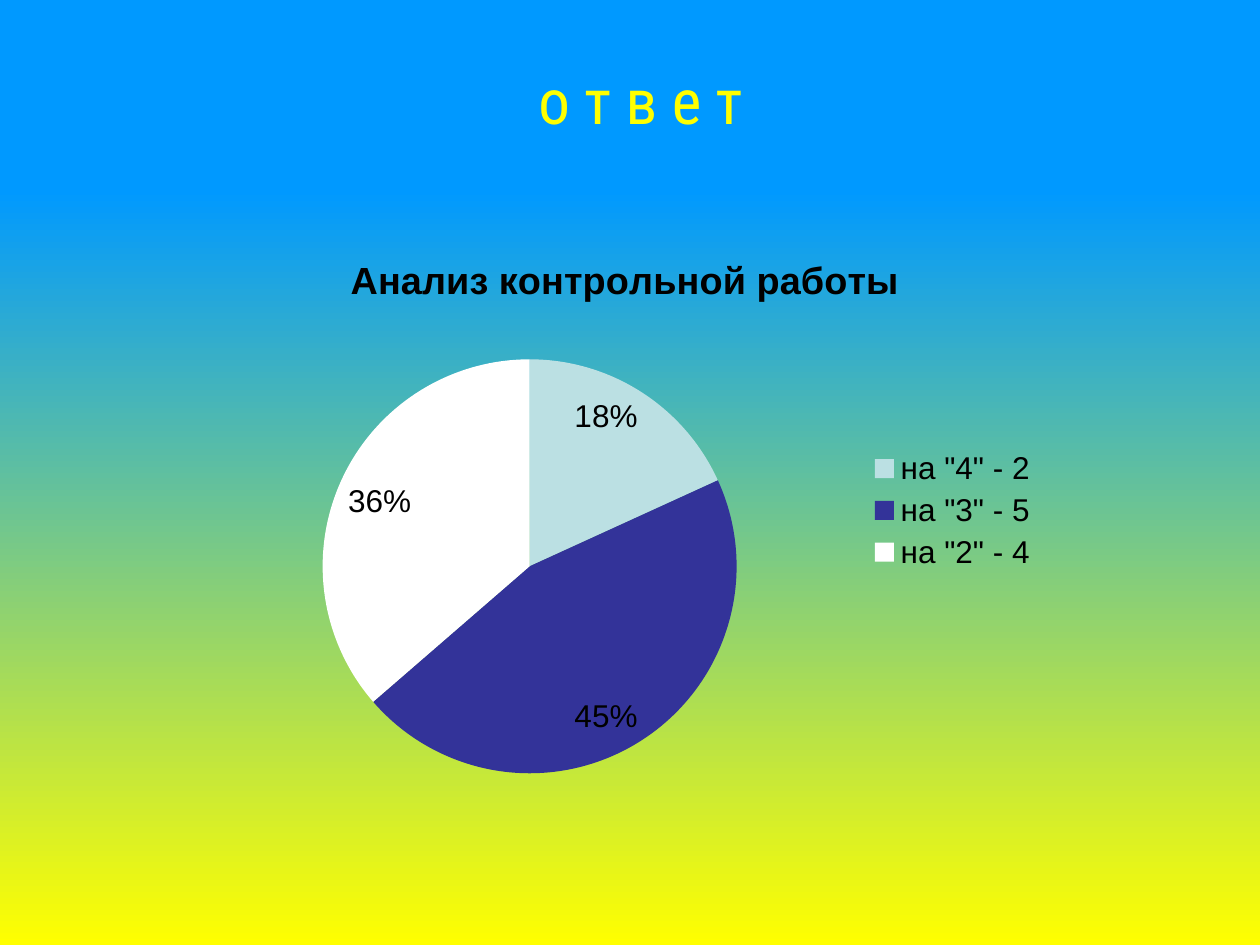
import copy

import pptx
import pptx.chart.data
import pptx.dml.color
import pptx.enum.chart
import pptx.enum.text
import pptx.oxml
import pptx.oxml.ns
import pptx.util
from pptx.util import Cm

CHART_TITLE = "Анализ контрольной работы "
GRADES = [
    ('на "4" - 2', 0.18, "BBE0E3"),
    ('на "3" - 5', 0.45, "333399"),
    ('на "2" - 4', 0.36, "FFFFFF"),
]


def colour(code):
    return pptx.dml.color.RGBColor.from_string(code)


class SlideBuilder:
    heading_font = "Roboto Condensed"
    chart_font = "Arial"
    heading_colour = "FFFF00"
    chart_colour = "000000"

    def __init__(self, page):
        self.page = page

    def style(self, font, name, size, code, bold=False):
        font.name = name
        font.size = pptx.util.Pt(size)
        font.bold = bold
        font.color.rgb = colour(code)

    def background(self, stops):
        fill = self.page.background.fill
        fill.gradient()
        fill.gradient_angle = 270  # top to bottom
        # A new gradient has two stops; add the others
        stop_list = fill.gradient_stops[0]._gs.getparent()
        while len(stop_list) < len(stops):
            stop_list.append(copy.deepcopy(stop_list[-1]))
        for stop, (position, code) in zip(fill.gradient_stops, stops):
            stop.position = position
            stop.color.rgb = colour(code)

    def heading(self, text, left, top, width, height):
        box = self.page.shapes.add_textbox(left, top, width, height)
        box.text_frame.word_wrap = False
        para = box.text_frame.paragraphs[0]
        para.text = text
        para.alignment = pptx.enum.text.PP_ALIGN.CENTER
        self.style(para.font, self.heading_font, 36, self.heading_colour)

    def pie(self, title, grades, left, top, width, height):
        data = pptx.chart.data.CategoryChartData(number_format="0%")
        data.categories = [name for name, _, _ in grades]
        data.add_series(title, [share for _, share, _ in grades])
        chart = self.page.shapes.add_chart(
            pptx.enum.chart.XL_CHART_TYPE.PIE, left, top, width, height, data
        ).chart
        self.style(chart.font, self.chart_font, 18, self.chart_colour)

        # Title
        chart.has_title = True
        para = chart.chart_title.text_frame.paragraphs[0]
        para.text = title
        self.style(para.font, self.chart_font, 21.6, self.chart_colour, True)
        chart.chart_title.include_in_layout = False

        # Legend
        chart.has_legend = True
        chart.legend.position = pptx.enum.chart.XL_LEGEND_POSITION.RIGHT
        chart.legend.include_in_layout = False
        self.style(chart.legend.font, self.chart_font, 18, self.chart_colour)

        # Slices and labels
        plot = chart.plots[0]
        plot.vary_by_categories = True
        for index, (_, _, code) in enumerate(grades):
            slice_format = plot.series[0].points[index].format
            slice_format.fill.solid()
            slice_format.fill.fore_color.rgb = colour(code)
            slice_format.line.fill.background()
        plot.has_data_labels = True
        labels = plot.data_labels
        labels.show_value = True
        labels.show_percentage = False
        labels.number_format = "0%"
        labels.number_format_is_linked = False
        labels.position = pptx.enum.chart.XL_LABEL_POSITION.INSIDE_END
        self.style(labels.font, self.chart_font, 18, self.chart_colour)
        self.place_plot(chart, x=0.13, y=0.23, w=0.5, h=0.74)

    def place_plot(self, chart, **fractions):
        namespace = pptx.oxml.ns.nsdecls("c")
        values = "".join(f'<c:{key} val="{value}"/>' for key, value in fractions.items())
        layout = pptx.oxml.parse_xml(
            f'<c:layout {namespace}><c:manualLayout><c:layoutTarget val="inner"/>'
            f'<c:xMode val="edge"/><c:yMode val="edge"/>{values}'
            "</c:manualLayout></c:layout>"
        )
        area = chart._chartSpace.chart.plotArea
        for old in area.findall(pptx.oxml.ns.qn("c:layout")):
            area.remove(old)
        area.insert(0, layout)


def main():
    deck = pptx.Presentation()
    deck.slide_width, deck.slide_height = Cm(25.4), Cm(19.05)
    builder = SlideBuilder(deck.slides.add_slide(deck.slide_layouts[6]))

    # Blue to yellow backdrop
    builder.background([(0, "0099FF"), (0.2, "0099FF"), (1, "FFFF00")])

    # Heading
    builder.heading("о т в е т", Cm(7.11), Cm(1.12), Cm(11.61), Cm(2.59))

    # Test results
    builder.pie(CHART_TITLE, GRADES, Cm(4.24), Cm(4.65), Cm(16.94), Cm(11.28))

    deck.save("out.pptx")


if __name__ == "__main__":
    main()
